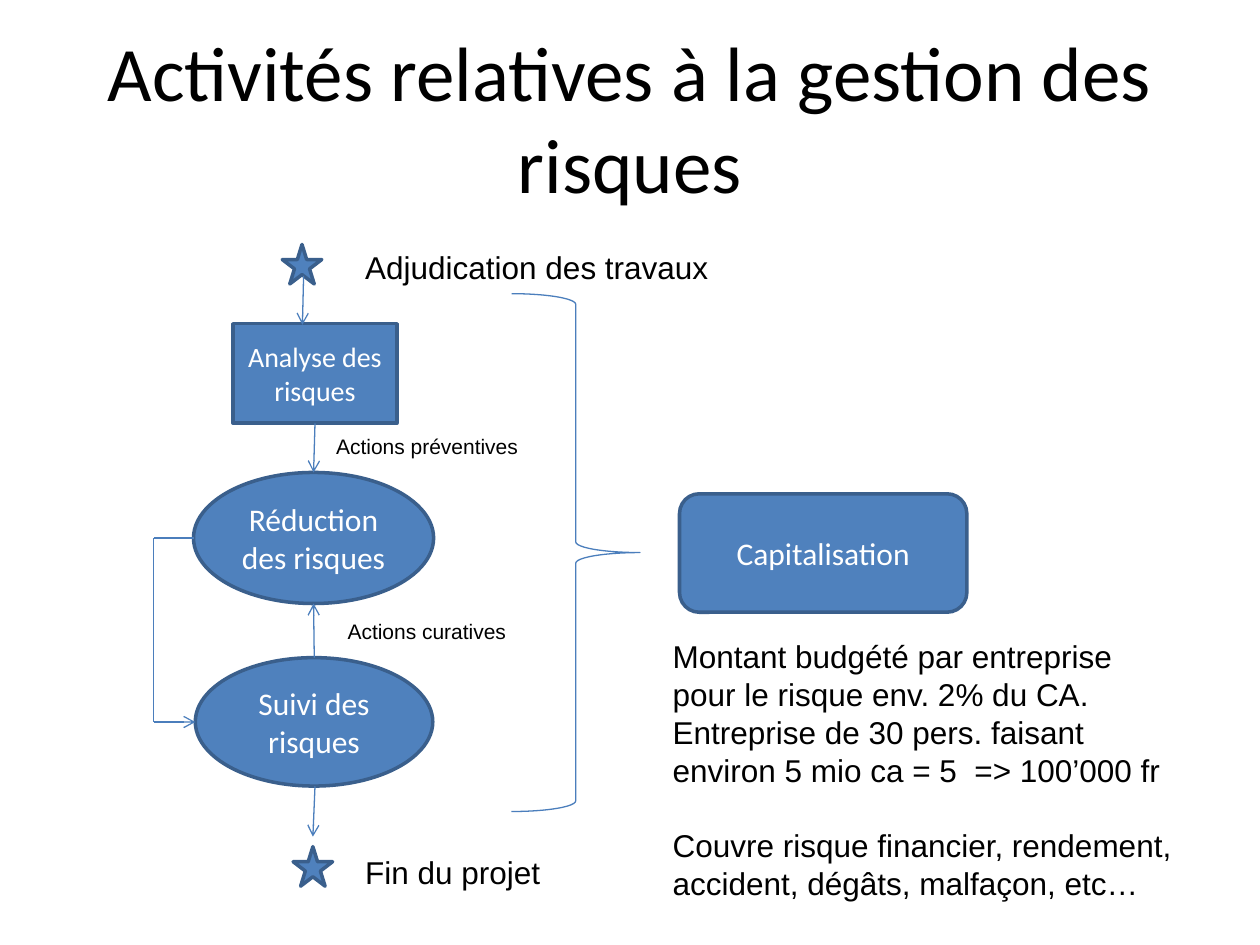
from lxml import etree
from pptx import Presentation
from pptx.dml.color import RGBColor
from pptx.enum import shapes, text
from pptx.oxml import ns
from pptx.util import Pt

HUES = {"fill": "4F81BD", "edge": "3A5F8C", "link": "4B7EBC", "ink": "000000", "pale": "FFFFFF"}
KIND = shapes.MSO_SHAPE
MID = text.MSO_ANCHOR.MIDDLE


def tint(part, hue):
    part.rgb = RGBColor.from_string(HUES[hue])


def write(frame, lines, size, font, hue, align, gap=0):
    frame.word_wrap = True
    for i, line in enumerate(lines):
        para = frame.paragraphs[0] if i == 0 else frame.add_paragraph()
        para.alignment = align
        if i == 2:
            para.space_before = Pt(gap)
        run = para.add_run()
        run.text = line
        run.font.size = Pt(size)
        run.font.name = font
        tint(run.font.color, hue)


deck = Presentation()
deck.slide_width, deck.slide_height = Pt(720), Pt(540)
slide = deck.slides.add_slide(deck.slide_layouts[6])
pool = slide.shapes

title = pool.add_textbox(Pt(36), Pt(21.6), Pt(648), Pt(90)).text_frame
title.vertical_anchor = MID
write(title, ["Activités relatives à la gestion des risques"], 44, "Calibri", "ink", text.PP_ALIGN.CENTER)

nodes = [
    (KIND.RECTANGLE, 133.2, 185, 93.6, 56.9, "Analyse des risques", 16),
    (KIND.STAR_5_POINT, 161.3, 139.7, 22.6, 22.6, "", 0),
    (KIND.OVAL, 110.6, 270, 137.2, 74.9, "Réduction des risques", 18),
    (KIND.OVAL, 111.6, 375.8, 135.7, 73.4, "Suivi des risques", 18),
    (KIND.STAR_5_POINT, 167.5, 483.8, 22.6, 22.6, "", 0),
    (KIND.ROUNDED_RECTANGLE, 388.3, 282.2, 164.2, 67.7, "Capitalisation", 18),
]
for kind, x, y, w, h, label, size in nodes:
    node = pool.add_shape(kind, Pt(x), Pt(y), Pt(w), Pt(h))
    node.shadow.inherit = False
    node.fill.solid()
    tint(node.fill.fore_color, "fill")
    tint(node.line.color, "edge")
    node.line.width = Pt(2)
    if label:
        node.text_frame.vertical_anchor = MID
        write(node.text_frame, [label], size, "Calibri", "pale", text.PP_ALIGN.CENTER)

brace = pool.add_shape(KIND.RIGHT_BRACE, Pt(292.3), Pt(167.8), Pt(73.4), Pt(295.9))
brace.shadow.inherit = False
brace.fill.background()
tint(brace.line.color, "link")
brace.line.width = Pt(0.75)

links = [
    (110.6, 307.4, 87.8, 307.4, False),
    (87.8, 307.4, 87.8, 412.6, False),
    (87.8, 412.6, 111.6, 412.6, True),
    (179.6, 375.8, 179.2, 344.9, True),
    (180, 241.9, 179.2, 270, True),
    (180, 449.3, 178.8, 478.1, True),
    (173.5, 157.7, 172.8, 185.6, True),
]
for x1, y1, x2, y2, arrow in links:
    link = pool.add_connector(shapes.MSO_CONNECTOR.STRAIGHT, Pt(x1), Pt(y1), Pt(x2), Pt(y2))
    tint(link.line.color, "link")
    link.line.width = Pt(0.75)
    if arrow:
        etree.SubElement(link.line._get_or_add_ln(), ns.qn("a:tailEnd"), type="arrow")
    etree.SubElement(link._element.spPr, ns.qn("a:effectLst"))

notes = [
    (201.6, 138.2, 238.3, 28.8, 18, ["Adjudication des travaux"]),
    (201.6, 483.8, 238.3, 28.8, 18, ["Fin du projet"]),
    (191.5, 349.9, 238.3, 21.6, 12, ["Actions curatives"]),
    (185, 244.1, 238.3, 21.6, 12, ["Actions préventives"]),
    (377.3, 360.7, 300.2, 159.8, 18, [
        "Montant budgété par entreprise pour le risque env. 2% du CA.",
        "Entreprise de 30 pers. faisant environ 5 mio ca = 5  => 100’000 fr",
        "Couvre risque financier, rendement, accident, dégâts, malfaçon, etc…",
    ]),
]
for x, y, w, h, size, lines in notes:
    note = pool.add_textbox(Pt(x), Pt(y), Pt(w), Pt(h)).text_frame
    write(note, lines, size, "Arial", "ink", text.PP_ALIGN.LEFT, 21.6)
    note.auto_size = text.MSO_AUTO_SIZE.SHAPE_TO_FIT_TEXT

deck.save("out.pptx")
